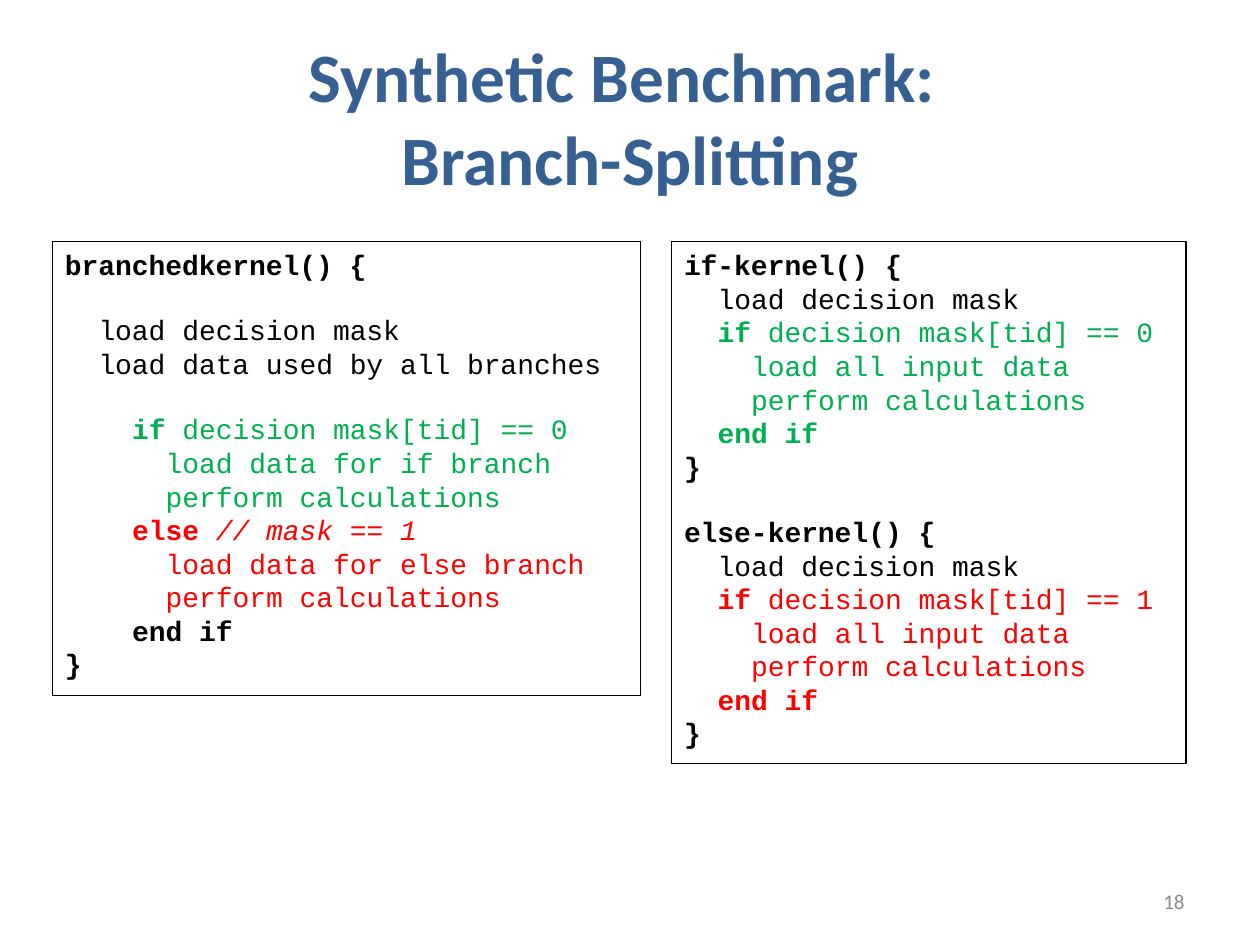
import pptx
import pptx.dml.color
import pptx.enum.shapes
import pptx.enum.text
import pptx.util

Cm = pptx.util.Cm
Pt = pptx.util.Pt
ALIGN = pptx.enum.text.PP_ALIGN
ANCHOR = pptx.enum.text.MSO_ANCHOR

COLOURS = {
    "title": "376092",
    "code": "000000",
    "if": "00B050",
    "else": "FF0000",
    "number": "8C8C8C",
}

# A line of code is (indent level, blank line before, spans);
# a span is (text, colour name, style letters: b bold, i italic).
BRANCHED_KERNEL = [
    (0, False, [("branchedkernel() {", "code", "b")]),
    (1, True, [("load decision mask", "code", "")]),
    (1, False, [("load data used by all branches", "code", "")]),
    (2, True, [("if ", "if", "b"), ("decision mask[tid] == 0", "if", "")]),
    (3, False, [("load data for if branch", "if", "")]),
    (3, False, [("perform calculations", "if", "")]),
    (2, False, [("else ", "else", "b"), ("// mask == 1", "else", "i")]),
    (3, False, [("load data for else branch", "else", "")]),
    (3, False, [("perform calculations", "else", "")]),
    (2, False, [("end if", "code", "b")]),
    (0, False, [("}", "code", "b")]),
]


def split_kernel(branch, mask, blank_before):
    return [
        (0, blank_before, [(f"{branch}-kernel() {{", "code", "b")]),
        (1, False, [("load decision mask", "code", "")]),
        (1, False, [("if", branch, "b"),
                    (f" decision mask[tid] == {mask}", branch, "")]),
        (2, False, [("load all input data", branch, "")]),
        (2, False, [("perform calculations", branch, "")]),
        (1, False, [("end if", branch, "b")]),
        (0, False, [("}", "code", "b")]),
    ]


class SlideBuilder:
    """Holds the text style and the page being filled."""

    text_font = "Calibri"
    code_font = "Courier New"
    code_size = 16
    indent = Pt(19.2)      # two characters of code
    blank_line = Pt(18.1)  # one line of code

    def __init__(self, deck):
        self.page = deck.slides.add_slide(deck.slide_layouts[5])

    def colour(self, name):
        return pptx.dml.color.RGBColor.from_string(COLOURS[name])

    def span(self, para, text, font, size, colour, style=""):
        span = para.add_run()
        span.text = text
        span.font.name = font
        span.font.size = Pt(size)
        span.font.bold = "b" in style
        span.font.italic = "i" in style
        span.font.color.rgb = self.colour(colour)

    def title(self, lines, left, top, width, height):
        box = self.page.shapes.title
        box.left, box.top, box.width, box.height = left, top, width, height
        frame = box.text_frame
        frame.auto_size = pptx.enum.text.MSO_AUTO_SIZE.NONE
        frame.vertical_anchor = ANCHOR.MIDDLE
        para = frame.paragraphs[0]
        para.alignment = ALIGN.CENTER
        for index, line in enumerate(lines):
            if index:
                para.add_line_break()
            self.span(para, line, self.text_font, 39.6, "title", "b")

    def code_box(self, lines, left, top, width, height):
        box = self.page.shapes.add_shape(
            pptx.enum.shapes.MSO_SHAPE.RECTANGLE, left, top, width, height)
        box.shadow.inherit = False
        box.fill.background()
        box.line.color.rgb = self.colour("code")
        box.line.width = Pt(0.75)
        frame = box.text_frame
        frame.word_wrap = True
        frame.vertical_anchor = ANCHOR.TOP
        for index, (level, blank_before, spans) in enumerate(lines):
            para = frame.add_paragraph() if index else frame.paragraphs[0]
            para.alignment = ALIGN.LEFT
            para.space_before = self.blank_line if blank_before else Pt(0)
            para._p.get_or_add_pPr().set("marL", str(level * self.indent))
            for text, colour, style in spans:
                self.span(para, text, self.code_font, self.code_size,
                          colour, style)

    def page_number(self, number, left, top, width, height):
        box = self.page.shapes.add_textbox(left, top, width, height)
        frame = box.text_frame
        frame.word_wrap = True
        frame.vertical_anchor = ANCHOR.MIDDLE
        para = frame.paragraphs[0]
        para.alignment = ALIGN.RIGHT
        self.span(para, str(number), self.text_font, 12, "number")


def main():
    deck = pptx.Presentation()
    deck.slide_width, deck.slide_height = Cm(25.4), Cm(19.05)
    builder = SlideBuilder(deck)
    builder.title(["Synthetic Benchmark: ", "Branch-Splitting"],
                  Cm(1.27), Cm(0.76), Cm(22.86), Cm(3.18))
    code_top = Cm(4.87)
    builder.code_box(BRANCHED_KERNEL, Cm(1.06), code_top, Cm(11.86), Cm(9.15))
    builder.code_box(
        split_kernel("if", 0, False) + split_kernel("else", 1, True),
        Cm(13.54), code_top, Cm(10.37), Cm(10.52))
    builder.page_number(18, Cm(18.2), Cm(17.66), Cm(5.93), Cm(1.01))
    deck.save("out.pptx")


if __name__ == "__main__":
    main()
